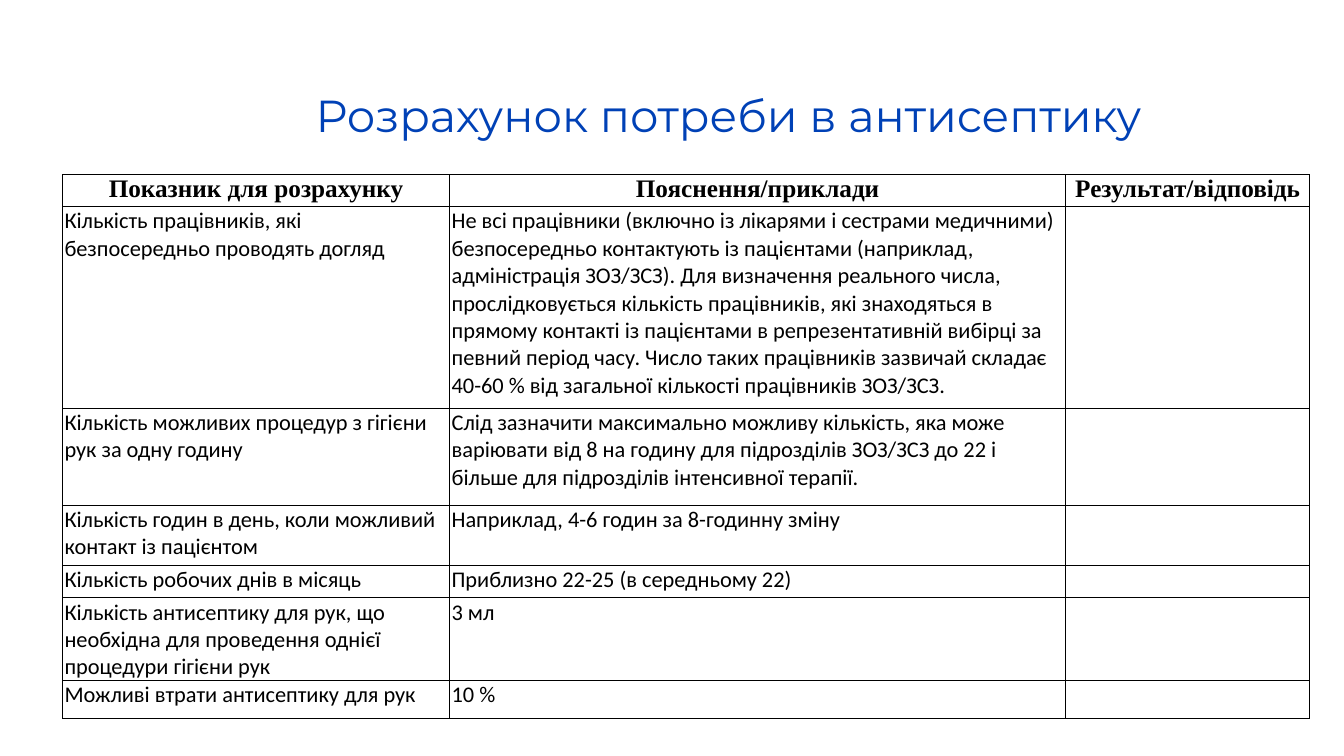
import pptx
import pptx.dml.color
import pptx.enum.text
import pptx.oxml
import pptx.oxml.ns
import pptx.util

Inches = pptx.util.Inches
Pt = pptx.util.Pt
Align = pptx.enum.text.PP_ALIGN
Anchor = pptx.enum.text.MSO_ANCHOR

HEADS = ["Показник для розрахунку", "Пояснення/приклади", "Результат/відповідь"]
ITEMS = [
    ("Кількість працівників, які безпосередньо проводять догляд",
     "Не всі працівники (включно із лікарями і сестрами медичними) безпосередньо "
     "контактують із пацієнтами (наприклад, адміністрація ЗОЗ/ЗСЗ). Для визначення "
     "реального числа, прослідковується кількість працівників, які знаходяться в "
     "прямому контакті із пацієнтами в репрезентативній вибірці за певний період часу. "
     "Число таких працівників зазвичай складає 40-60 % від загальної кількості "
     "працівників ЗОЗ/ЗСЗ."),
    ("Кількість можливих процедур з гігієни рук за одну годину",
     "Слід зазначити максимально можливу кількість, яка може варіювати від 8 на годину "
     "для підрозділів ЗОЗ/ЗСЗ до 22 і більше для підрозділів інтенсивної терапії."),
    ("Кількість годин в день, коли можливий контакт із пацієнтом",
     "Наприклад, 4-6 годин за 8-годинну зміну"),
    ("Кількість робочих днів в місяць", "Приблизно 22-25 (в середньому 22)"),
    ("Кількість антисептику для рук, що необхідна для проведення однієї процедури "
     "гігієни рук", "3 мл"),
    ("Можливі втрати антисептику для рук", "10 %"),
]
WIDTHS = [3.84, 6.11, 2.42]
HEIGHTS = [0.28, 2, 0.96, 0.6, 0.31, 0.81, 0.38]


def color(code):
    return pptx.dml.color.RGBColor.from_string(code)


def write(frame, text, size=16, face="Calibri", tint="000000", bold=False,
          align=Align.LEFT, after=0):
    para = frame.paragraphs[0]
    para.alignment = align
    para.space_after = Pt(after)
    run = para.add_run()
    run.text = text
    run.font.size = Pt(size)
    run.font.name = face
    run.font.bold = bold
    run.font.color.rgb = color(tint)


class Page:
    blue = "0041B6"
    white = "FFFFFF"
    black = "000000"
    rule = 0.6

    def __init__(self, deck):
        self.slide = deck.slides.add_slide(deck.slide_layouts[6])

    def title(self, text, *area):
        frame = self.slide.shapes.add_textbox(*map(Inches, area)).text_frame
        frame.word_wrap = True
        frame.vertical_anchor = Anchor.MIDDLE
        write(frame, text, size=32, face="Montserrat", tint=self.blue,
              align=Align.CENTER, after=24)

    def border(self, cell):
        props = cell._tc.get_or_add_tcPr()
        for side in "LRTB":
            props.append(pptx.oxml.parse_xml(
                f'<a:ln{side} {pptx.oxml.ns.nsdecls("a")} w="{Pt(self.rule)}">'
                f'<a:solidFill><a:srgbClr val="{self.black}"/></a:solidFill>'
                f'</a:ln{side}>'))

    def cell(self, cell, text, **style):
        self.border(cell)
        cell.fill.solid()
        cell.fill.fore_color.rgb = color(self.white)
        cell.margin_left = cell.margin_right = Inches(0.02)
        cell.margin_top = cell.margin_bottom = Inches(0.01)
        write(cell.text_frame, text, **style)

    def table(self, heads, items, left, top):
        table = self.slide.shapes.add_table(
            len(HEIGHTS), len(WIDTHS), Inches(left), Inches(top),
            Inches(sum(WIDTHS)), Inches(sum(HEIGHTS))).table
        for column, width in zip(table.columns, WIDTHS):
            column.width = Inches(width)
        for row, height in zip(table.rows, HEIGHTS):
            row.height = Inches(height)
        for col, text in enumerate(heads):
            self.cell(table.cell(0, col), text, size=18, face="Times New Roman",
                      bold=True, align=Align.CENTER)
        for row, item in enumerate(items, 1):
            for col, text in enumerate((*item, "")):
                self.cell(table.cell(row, col), text)


def main():
    deck = pptx.Presentation()
    deck.slide_width = Inches(13.33)
    deck.slide_height = Inches(7.5)
    page = Page(deck)
    page.title("Розрахунок потреби в антисептику", 2.38, 0, 9.7, 2.28)
    page.table(HEADS, ITEMS, 0.62, 1.73)
    deck.save("out.pptx")


if __name__ == "__main__":
    main()
